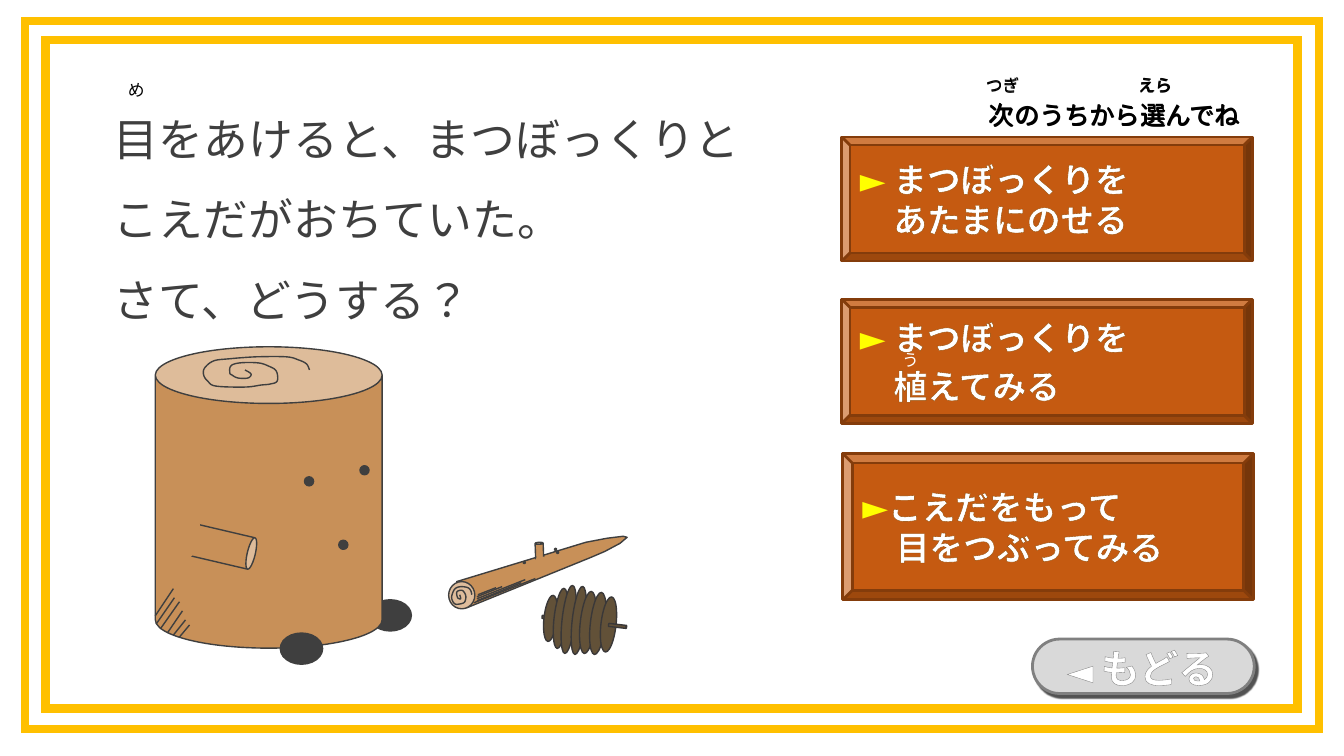
from lxml import etree
from pptx import Presentation
from pptx.dml.color import RGBColor
from pptx.enum.lang import MSO_LANGUAGE_ID
from pptx.enum.shapes import MSO_CONNECTOR, MSO_SHAPE
from pptx.enum.text import MSO_ANCHOR, MSO_AUTO_SIZE, PP_ALIGN
from pptx.oxml import parse_xml
from pptx.oxml.ns import nsdecls, qn
from pptx.util import Inches, Pt

RECT, ELLIPSE, CAN = MSO_SHAPE.RECTANGLE, MSO_SHAPE.OVAL, MSO_SHAPE.CAN
BEVEL, PILL = MSO_SHAPE.BEVEL, MSO_SHAPE.ROUNDED_RECTANGLE
STRAIGHT = MSO_CONNECTOR.STRAIGHT
LEFT, CENTER = PP_ALIGN.LEFT, PP_ALIGN.CENTER
TOP, MIDDLE = MSO_ANCHOR.TOP, MSO_ANCHOR.MIDDLE
GROW = MSO_AUTO_SIZE.SHAPE_TO_FIT_TEXT
LANGUAGE = MSO_LANGUAGE_ID.JAPANESE

GOLD = RGBColor(0xFF, 0xC0, 0x00)
INK = RGBColor(0x3F, 0x3F, 0x3F)
BLACK = RGBColor(0x00, 0x00, 0x00)
WHITE = RGBColor(0xFF, 0xFF, 0xFF)
YELLOW = RGBColor(0xFF, 0xFF, 0x00)
WOOD = RGBColor(0xC8, 0x90, 0x58)
CUT_WOOD = RGBColor(0xDE, 0xBC, 0x9B)
CONE = RGBColor(0x62, 0x51, 0x38)
CONE_EDGE = RGBColor(0x3A, 0x38, 0x38)
BUTTON = RGBColor(0xC5, 0x5A, 0x11)
BUTTON_EDGE = RGBColor(0x84, 0x3C, 0x0B)
LETTER_EDGE = RGBColor(0x8E, 0x47, 0x00)
SILVER = RGBColor(0xD9, 0xD9, 0xD9)
GRAY = RGBColor(0x80, 0x80, 0x80)

LATIN = "Arial"
JAPANESE = "Noto Sans CJK JP"

TRUNK_HATCH = [
    (1.72, 5.84, 1.54, 6.11), (1.73, 5.93, 1.55, 6.19), (1.78, 5.97, 1.59, 6.24),
    (1.81, 6.06, 1.66, 6.28), (1.84, 6.15, 1.72, 6.30), (1.88, 6.20, 1.78, 6.32),
]
TWIG_HATCH = [
    (5.31, 5.74, 4.70, 5.98), (5.21, 5.75, 4.73, 5.94), (5.17, 5.78, 4.73, 5.96),
    (4.98, 5.82, 4.73, 5.92), (4.92, 5.83, 4.74, 5.90),
]
TRUNK_RINGS = [
    (2.43, 3.67), (2.49, 3.71), (2.46, 3.75), (2.36, 3.75), (2.30, 3.72), (2.28, 3.70),
    (2.29, 3.63), (2.38, 3.60), (2.56, 3.60), (2.66, 3.63), (2.74, 3.68), (2.75, 3.78),
    (2.68, 3.81), (2.59, 3.82), (2.43, 3.84), (2.14, 3.83), (2.06, 3.78), (2.02, 3.72),
    (2.03, 3.65), (2.12, 3.58), (2.27, 3.56), (2.54, 3.54), (2.84, 3.54), (2.96, 3.57),
    (3.04, 3.61), (3.07, 3.67),
]
TWIG_RINGS = [
    (4.56, 5.90), (4.57, 5.94), (4.54, 5.93), (4.53, 5.88), (4.55, 5.86), (4.59, 5.86),
    (4.62, 5.91), (4.61, 5.97), (4.57, 5.99), (4.51, 5.99), (4.48, 5.93), (4.50, 5.86),
    (4.53, 5.83), (4.58, 5.82), (4.64, 5.83), (4.67, 5.86), (4.68, 5.90),
]
TWIG_BODY = [
    (4.53, 5.77), (5.81, 5.38), (6.02, 5.34), (6.18, 5.32), (6.22, 5.33),
    (6.15, 5.39), (6.00, 5.47), (5.86, 5.53), (4.63, 6.03),
]
CONE_SCALES = [
    (5.23, 6.07, 0.46, 0.13), (5.26, 6.07, 0.60, 0.13), (5.30, 6.08, 0.68, 0.13),
    (5.40, 6.09, 0.68, 0.13), (5.52, 6.10, 0.62, 0.15), (5.62, 6.11, 0.62, 0.15),
    (5.76, 6.12, 0.55, 0.15),
]


def paint(shape, fill, line, width):
    shape.shadow.inherit = False
    if fill is None:
        shape.fill.background()
    else:
        shape.fill.solid()
        shape.fill.fore_color.rgb = fill
    if line is None:
        shape.line.fill.background()
    else:
        shape.line.color.rgb = line
        shape.line.width = Pt(width)


def add_form(slide, kind, box, fill=None, line=INK, width=1, turn=0, adjust=None):
    form = slide.shapes.add_shape(kind, *map(Inches, box))
    paint(form, fill, line, width)
    form.rotation = turn
    if adjust is not None:
        form.adjustments[0] = adjust
    return form


def add_outline(slide, points, fill=None, closed=False):
    start, *rest = [(Inches(x), Inches(y)) for x, y in points]
    builder = slide.shapes.build_freeform(*start)
    builder.add_line_segments(rest, close=closed)
    paint(builder.convert_to_shape(), fill, INK, 1)


def smooth(points, steps=6):
    padded = [points[0], *points, points[-1]]
    curve = [points[0]]
    for a, b, c, d in zip(padded, padded[1:], padded[2:], padded[3:]):
        for step in range(1, steps + 1):
            t = step / steps
            curve.append(tuple(
                q + t / 2 * (r - p + t * (2*p - 5*q + 4*r - s + t * (3*q - p - 3*r + s)))
                for p, q, r, s in zip(a, b, c, d)))
    return curve


def add_stroke(slide, ends):
    stroke = slide.shapes.add_connector(STRAIGHT, *map(Inches, ends))
    stroke.line.color.rgb = INK
    stroke.line.width = Pt(1)
    etree.SubElement(stroke._element.spPr, qn("a:effectLst"))


def add_run(paragraph, text, size=24, color=WHITE, font=LATIN, bold=False, edge=None, edge_width=1):
    run = paragraph.add_run()
    run.text = text
    run.font.size = Pt(size)
    run.font.bold = bold
    run.font.name = font
    run.font.language_id = LANGUAGE
    run.font.color.rgb = color
    props = run.font._element
    props.find(qn("a:latin")).addnext(
        parse_xml(f'<a:ea {nsdecls("a")} typeface="{JAPANESE}"/>'))
    if edge is not None:
        props.insert(0, parse_xml(
            f'<a:ln {nsdecls("a")} w="{Pt(edge_width)}"><a:solidFill>'
            f'<a:srgbClr val="{edge}"/></a:solidFill></a:ln>'))


def write(shape, lines, align=LEFT, anchor=TOP, spacing=None, before=0, grow=True):
    frame = shape.text_frame
    frame.word_wrap = True
    frame.vertical_anchor = anchor
    if grow:
        frame.auto_size = GROW
    for index, runs in enumerate(lines):
        paragraph = frame.add_paragraph() if index else frame.paragraphs[0]
        paragraph.alignment = align
        paragraph.space_before = Pt(before)
        if spacing:
            paragraph.line_spacing = spacing
        for text, style in runs:
            add_run(paragraph, text, **style)


def add_label(slide, box, text, **style):
    write(slide.shapes.add_textbox(*map(Inches, box)), [[(text, style)]])


def add_choice(slide, box, first, second, before=0):
    button = add_form(slide, BEVEL, box, BUTTON, BUTTON_EDGE, 2, adjust=0.065)
    letters = dict(font=JAPANESE, bold=True, edge=LETTER_EDGE)
    write(button, [[("►", dict(letters, color=YELLOW)), (first, letters)], [(second, letters)]],
          anchor=MIDDLE, before=before, grow=False)


def add_border(slide, box):
    border = add_form(slide, RECT, box, None, GOLD, 6)
    etree.SubElement(border.line._ln, qn("a:miter"), lim="800000")


def add_story(slide):
    story = slide.shapes.title
    story.left, story.top, story.width, story.height = map(Inches, (1.03, 0.79, 8.4, 2.52))
    sentences = ["目をあけると、まつぼっくりと", "こえだがおちていた。", "さて、どうする？"]
    write(story, [[(text, dict(size=32, color=INK))] for text in sentences], spacing=1.5)


def add_twig(slide):
    add_outline(slide, TWIG_BODY, WOOD, closed=True)
    add_form(slide, ELLIPSE, (4.45, 5.77, 0.26, 0.27), CUT_WOOD)
    add_outline(slide, smooth(TWIG_RINGS))
    add_form(slide, CAN, (5.31, 5.38, 0.08, 0.17), WOOD, turn=358, adjust=0.25)
    add_form(slide, ELLIPSE, (5.31, 5.52, 0.11, 0.07), WOOD, None, turn=355.4)
    for left, top in [(5.19, 5.57), (5.5, 5.44), (5.52, 5.47)]:
        add_form(slide, ELLIPSE, (left, top, 0.02, 0.02), INK)
    for ends in TWIG_HATCH:
        add_stroke(slide, ends)


def add_prompt(slide):
    for left, top in [(9.71, 0.94), (9.72, 0.95), (9.71, 0.95)]:
        add_label(slide, (left, top, 2.79, 0.4), "次のうちから選んでね", size=18, color=BLACK)
    for left, top in [(11.2, 0.69), (11.19, 0.69), (11.19, 0.7)]:
        add_label(slide, (left, top, 0.65, 0.3), "えら", size=12, color=BLACK)
    for top in (0.69, 0.7):
        add_label(slide, (9.68, top, 0.54, 0.3), "つぎ", size=12, color=BLACK)


def add_pinecone(slide):
    tilt = 96.5
    add_form(slide, CAN, (5.45, 6.04, 0.03, 0.18), CONE, CONE_EDGE, turn=tilt, adjust=0.25)
    for scale in CONE_SCALES:
        add_form(slide, ELLIPSE, scale, CONE, CONE_EDGE, turn=tilt)
    add_form(slide, CAN, (6.11, 6.12, 0.03, 0.18), CONE, CONE_EDGE, turn=tilt, adjust=0.25)


def add_stump(slide):
    add_form(slide, ELLIPSE, (3.66, 5.95, 0.42, 0.31), INK)
    add_form(slide, CAN, (1.54, 3.44, 2.25, 2.99), WOOD, adjust=0.25)
    add_form(slide, ELLIPSE, (2.78, 6.28, 0.42, 0.31), INK)
    for ends in TRUNK_HATCH:
        add_stroke(slide, ends)
    add_outline(slide, smooth(TRUNK_RINGS))
    add_form(slide, CAN, (2.03, 5.07, 0.32, 0.7), WOOD, turn=103.2, adjust=0.25)
    add_form(slide, ELLIPSE, (1.53, 5.12, 0.56, 0.35), WOOD, None, turn=96.5)
    for left, top in [(3.36, 5.36), (3.02, 4.73), (3.57, 4.62)]:
        add_form(slide, ELLIPSE, (left, top, 0.09, 0.09), INK)


def add_back_button(slide):
    pill = add_form(slide, PILL, (10.24, 6.34, 2.2, 0.54), SILVER, GRAY, 2, adjust=0.5)
    pill._element.spPr.find(qn("a:effectLst")).append(parse_xml(
        f'<a:outerShdw {nsdecls("a")} blurRad="{Pt(1)}" dist="{Pt(3)}" dir="3000000">'
        '<a:srgbClr val="000000"><a:alpha val="68000"/></a:srgbClr></a:outerShdw>'))
    caption = slide.shapes.add_textbox(*map(Inches, (10.23, 6.34, 2.2, 0.57)))
    letters = dict(font=JAPANESE, bold=True, edge=GRAY)
    write(caption, [[("◄ ", letters), ("もどる", dict(letters, size=28, edge_width=1.5))]], CENTER)


def main():
    deck = Presentation()
    deck.slide_width, deck.slide_height = Inches(13.33), Inches(7.5)
    slide = deck.slides.add_slide(deck.slide_layouts[5])
    add_border(slide, (0.25, 0.21, 12.83, 7.02))
    add_border(slide, (0.45, 0.4, 12.42, 6.63))
    add_story(slide)
    add_twig(slide)
    add_prompt(slide)
    add_pinecone(slide)
    add_stump(slide)
    add_choice(slide, (8.35, 1.36, 4.07, 1.23), " まつぼっくりを", "　あたまにのせる")
    add_choice(slide, (8.35, 2.97, 4.07, 1.23), " まつぼっくりを", "　植えてみる", before=6)
    add_choice(slide, (8.36, 4.5, 4.07, 1.45), "こえだをもって", "　目をつぶってみる")
    add_back_button(slide)
    add_label(slide, (1.17, 0.74, 0.82, 0.3), "め", size=12, color=BLACK)
    add_label(slide, (8.85, 3.42, 0.82, 0.3), "う", size=12, color=WHITE)
    deck.save("out.pptx")


if __name__ == "__main__":
    main()
